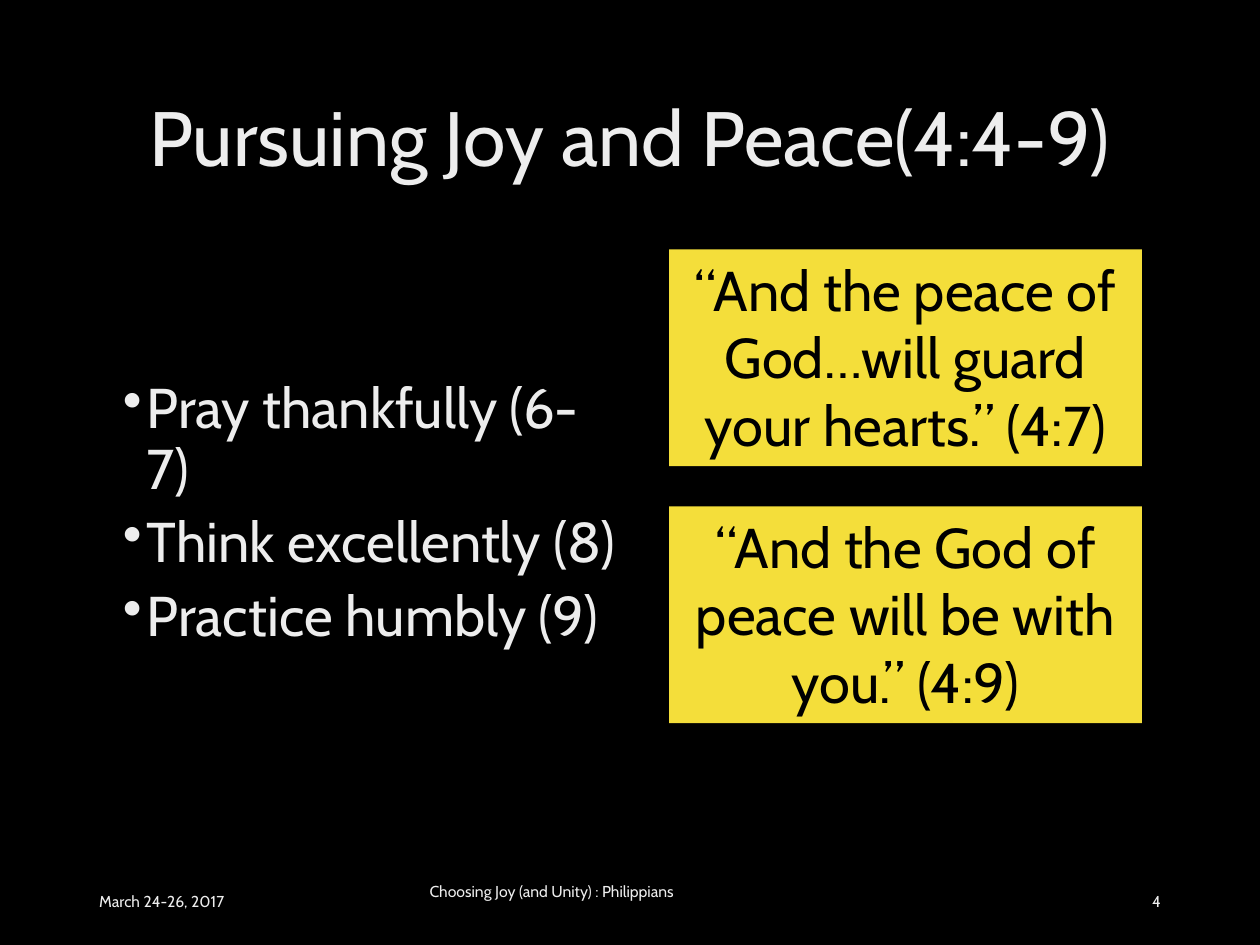
from lxml import etree
from pptx import Presentation
from pptx.dml.color import RGBColor
from pptx.enum.shapes import MSO_SHAPE
from pptx.enum.text import MSO_ANCHOR, MSO_AUTO_SIZE, PP_ALIGN
from pptx.oxml.ns import qn
from pptx.util import Cm, Pt

LEFT, CENTER, RIGHT = PP_ALIGN.LEFT, PP_ALIGN.CENTER, PP_ALIGN.RIGHT
TOP, MIDDLE = MSO_ANCHOR.TOP, MSO_ANCHOR.MIDDLE
GROW = MSO_AUTO_SIZE.SHAPE_TO_FIT_TEXT
RECTANGLE = MSO_SHAPE.RECTANGLE

# Content
title = "Pursuing Joy and Peace(4:4-9)"
practices = ["Pray thankfully (6-7)", "Think excellently (8)", "Practice humbly (9)"]
quotes = [
    "“And the peace of God…will guard your hearts.” (4:7)",
    "“And the God of peace will be with you.” (4:9)",
]
# text, left, width, alignment, anchor
footers = [
    ("March 24-26, 2017", 1.75, 5.72, LEFT, MIDDLE),
    ("Choosing Joy (and Unity) : Philippians", 8.41, 8.59, LEFT, TOP),
    ("4", 17.93, 5.72, RIGHT, MIDDLE),
]

# Format values
BLACK, LIGHT, YELLOW = "000000", "EDEDED", "F4DE3A"
FONT = "Cabin"
INDENT = Cm(0.48)
TITLE_FORMAT = {"alignment": CENTER, "line_spacing": 0.9}
PRACTICE_FORMAT = {"alignment": LEFT, "line_spacing": 0.9}


def rgb(value):
    return RGBColor.from_string(value)


def set_all(target, values):
    for name, value in values.items():
        setattr(target, name, value)


def add_bullet(paragraph):
    properties = paragraph._p.get_or_add_pPr()
    properties.set("marL", str(INDENT))
    properties.set("indent", str(-INDENT))
    etree.SubElement(properties, qn("a:buChar")).set("char", "•")


def write(shape, lines, size, color, layout, anchor=TOP, bullets=False):
    frame = shape.text_frame
    set_all(frame, {"word_wrap": True, "vertical_anchor": anchor})
    for number, line in enumerate(lines):
        paragraph = frame.add_paragraph() if number else frame.paragraphs[0]
        paragraph.text = line
        set_all(paragraph, layout)
        if number:
            paragraph.space_before = Pt(7.5)
        if bullets:
            add_bullet(paragraph)
        font = paragraph.runs[0].font
        set_all(font, {"name": FONT, "size": Pt(size)})
        font.color.rgb = rgb(color)


presentation = Presentation()
set_all(presentation, {"slide_width": Cm(25.4), "slide_height": Cm(19.05)})
slide = presentation.slides.add_slide(presentation.slide_layouts[6])
slide.background.fill.solid()
slide.background.fill.fore_color.rgb = rgb(BLACK)
shapes = slide.shapes

# Title and list of practices
heading = shapes.add_textbox(Cm(1.75), Cm(1.02), Cm(21.9), Cm(3.68))
write(heading, [title], 44, LIGHT, TITLE_FORMAT, MIDDLE)
practice_list = shapes.add_textbox(Cm(2.23), Cm(7.54), Cm(10.46), Cm(5.41))
write(practice_list, practices, 32, LIGHT, PRACTICE_FORMAT, bullets=True)

# Footer row
for text, left, width, alignment, anchor in footers:
    footer = shapes.add_textbox(Cm(left), Cm(17.65), Cm(width), Cm(1.02))
    write(footer, [text], 9, LIGHT, {"alignment": alignment}, anchor)

# Quotes stacked at an equal step
QUOTE_TOP, QUOTE_STEP = 5.03, 5.18
for row, text in enumerate(quotes):
    quote = shapes.add_shape(
        RECTANGLE, Cm(13.49), Cm(QUOTE_TOP + row * QUOTE_STEP), Cm(9.53), Cm(4.37))
    quote.shadow.inherit = False
    quote.fill.solid()
    quote.fill.fore_color.rgb = rgb(YELLOW)
    quote.line.fill.background()
    write(quote, [text], 32, BLACK, {"alignment": CENTER})
    quote.text_frame.auto_size = GROW

presentation.save("out.pptx")
